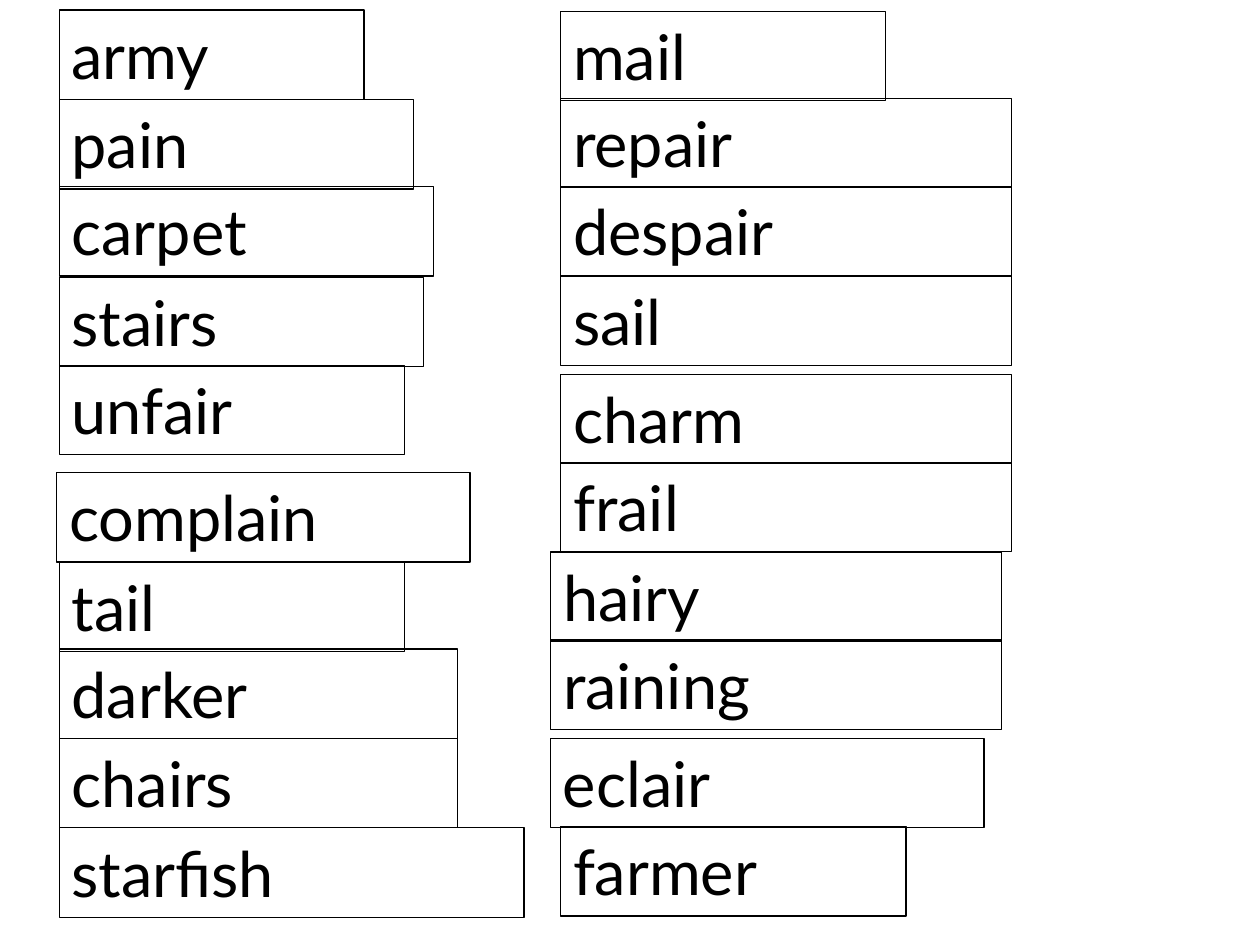
import dataclasses

import pptx
import pptx.dml.color
import pptx.enum.text
import pptx.util

Inches = pptx.util.Inches


@dataclasses.dataclass(frozen=True)
class Theme:
    ink: pptx.dml.color.RGBColor = pptx.dml.color.RGBColor(0, 0, 0)
    font: str = "Lato"
    word_size: float = 36
    line_width: float = 0.75


THEME = Theme()
CARD_HEIGHT = 0.71

LEFT_WORDS = [
    ("army", 0, 0.08, 2.42),
    ("pain", 0, 0.79, 2.81),
    ("carpet", 0, 1.48, 2.97),
    ("stairs", 0, 2.2, 2.89),
    ("unfair", 0, 2.9, 2.74),
    ("complain", -0.02, 3.75, 3.28),
    ("tail", 0, 4.46, 2.74),
    ("darker", 0, 5.15, 3.16),
    ("chairs", 0, 5.86, 3.16),
    ("starfish", 0, 6.57, 3.69),
]
RIGHT_WORDS = [
    ("mail", 0, 0.09, 2.58),
    ("repair", 0, 0.78, 3.58),
    ("despair", 0, 1.48, 3.58),
    ("sail", 0, 2.19, 3.58),
    ("charm", 0, 2.97, 3.58),
    ("frail", 0, 3.67, 3.58),
    ("hairy", -0.08, 4.38, 3.58),
    ("raining", -0.08, 5.08, 3.58),
    ("eclair", -0.08, 5.86, 3.44),
    ("farmer", 0, 6.56, 2.74),
]


def add_text(tf, text, size=THEME.word_size, font=THEME.font, color=THEME.ink):
    r = tf.paragraphs[0].add_run()
    r.text = text
    r.font.size = pptx.util.Pt(size)
    r.font.name = font
    r.font.color.rgb = color


def add_word_card(s, word, left, top, width, height):
    sp = s.shapes.add_textbox(left, top, width, height)
    sp.line.color.rgb = THEME.ink
    sp.line.width = pptx.util.Pt(THEME.line_width)
    tf = sp.text_frame
    tf.word_wrap = True
    tf.auto_size = pptx.enum.text.MSO_AUTO_SIZE.SHAPE_TO_FIT_TEXT
    add_text(tf, word)


def add_word_column(s, left, top, words):
    for word, shift, offset, width in words:
        add_word_card(s, word, left + Inches(shift), top + Inches(offset),
                      Inches(width), Inches(CARD_HEIGHT))


def main():
    prs = pptx.Presentation()
    prs.slide_width = Inches(10)
    prs.slide_height = Inches(7.5)
    s = prs.slides.add_slide(prs.slide_layouts[6])
    add_word_column(s, Inches(0.47), Inches(0), LEFT_WORDS)
    add_word_column(s, Inches(4.45), Inches(0), RIGHT_WORDS)
    prs.save("out.pptx")


if __name__ == "__main__":
    main()
